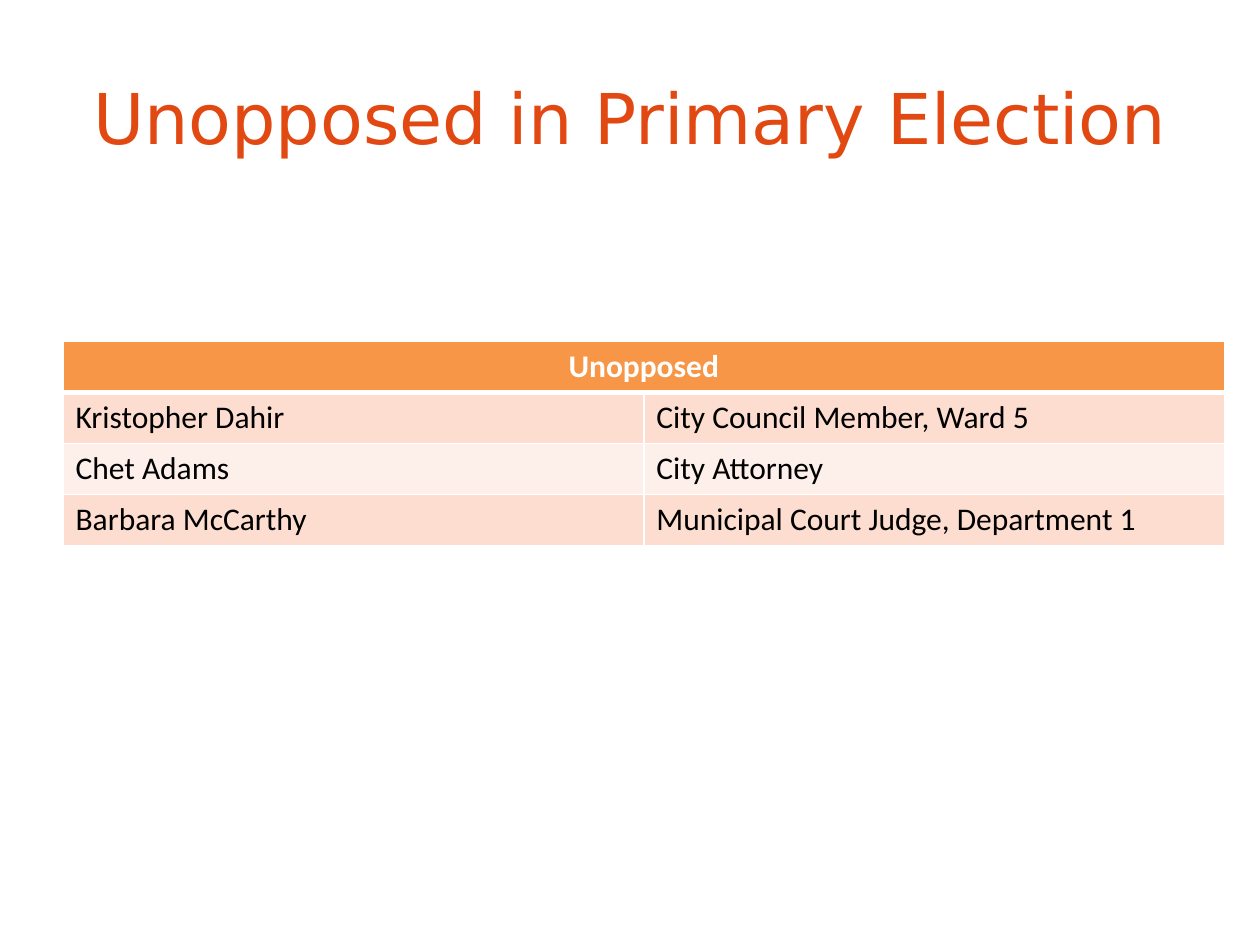
from dataclasses import dataclass

from lxml import etree
from pptx import Presentation
from pptx.dml.color import RGBColor
from pptx.enum import text
from pptx.oxml import ns
from pptx.util import Inches, Pt


@dataclass(frozen=True)
class Theme:
    title_font: str = "DejaVu Sans"
    body_font: str = "Calibri"
    title_size: int = 40
    body_size: int = 18
    title: str = "E24912"
    header: str = "F79646"
    bands: tuple[str, str] = ("FCDDCF", "FDEFE9")
    white: str = "FFFFFF"
    black: str = "000000"
    rule: int = 1
    header_rule: int = 3


@dataclass(frozen=True)
class Candidate:
    name: str
    office: str


THEME = Theme()
CANDIDATES = [
    Candidate("Kristopher Dahir", "City Council Member, Ward 5"),
    Candidate("Chet Adams", "City Attorney"),
    Candidate("Barbara McCarthy", "Municipal Court Judge, Department 1"),
]


def style_text(paragraph, font: str, size: int, color: str, bold: bool = False) -> None:
    for run in paragraph.runs:
        run.font.name = font
        run.font.size = Pt(size)
        run.font.bold = bold
        run.font.color.rgb = RGBColor.from_string(color)


def add_border(cell, side: str, width: int) -> None:
    border = etree.SubElement(cell._tc.get_or_add_tcPr(), ns.qn(f"a:ln{side}"), w=str(Pt(width)))
    fill = etree.SubElement(border, ns.qn("a:solidFill"))
    etree.SubElement(fill, ns.qn("a:srgbClr"), val=THEME.white)


def style_cell(cell, row: int) -> None:
    # Borders come before the fill in the cell properties
    widths = {
        "L": THEME.rule,
        "R": THEME.rule,
        "T": THEME.header_rule if row == 1 else THEME.rule,
        "B": THEME.header_rule if row == 0 else THEME.rule,
    }
    for side, width in widths.items():
        add_border(cell, side, width)
    is_header = row == 0
    cell.fill.solid()
    fill = THEME.header if is_header else THEME.bands[(row - 1) % 2]
    cell.fill.fore_color.rgb = RGBColor.from_string(fill)
    paragraph = cell.text_frame.paragraphs[0]
    paragraph.alignment = text.PP_ALIGN.CENTER if is_header else text.PP_ALIGN.LEFT
    color = THEME.white if is_header else THEME.black
    style_text(paragraph, THEME.body_font, THEME.body_size, color, is_header)


def add_title(slide, wording: str) -> None:
    heading = slide.shapes.add_textbox(Inches(0.5), Inches(0.3), Inches(9), Inches(1.25))
    frame = heading.text_frame
    frame.word_wrap = True
    frame.vertical_anchor = text.MSO_ANCHOR.MIDDLE
    frame.text = wording
    frame.paragraphs[0].alignment = text.PP_ALIGN.CENTER
    style_text(frame.paragraphs[0], THEME.title_font, THEME.title_size, THEME.title)


def add_candidates(slide, heading: str, candidates: list[Candidate]) -> None:
    row_count = len(candidates) + 1
    roster = slide.shapes.add_table(
        row_count, 2, Inches(0.5), Inches(2.71), Inches(9.22), Inches(0.405 * row_count)
    ).table
    roster.cell(0, 0).merge(roster.cell(0, 1))
    roster.cell(0, 0).text_frame.text = heading
    for row, candidate in enumerate(candidates, start=1):
        roster.cell(row, 0).text_frame.text = candidate.name
        roster.cell(row, 1).text_frame.text = candidate.office
    for row in range(row_count):
        for column in range(2):
            style_cell(roster.cell(row, column), row)


def main() -> None:
    deck = Presentation()
    deck.slide_width, deck.slide_height = Inches(10), Inches(7.5)
    slide = deck.slides.add_slide(deck.slide_layouts[6])

    # Title
    add_title(slide, "Unopposed in Primary Election")

    # Table of candidates and offices
    add_candidates(slide, "Unopposed", CANDIDATES)

    deck.save("out.pptx")


if __name__ == "__main__":
    main()
